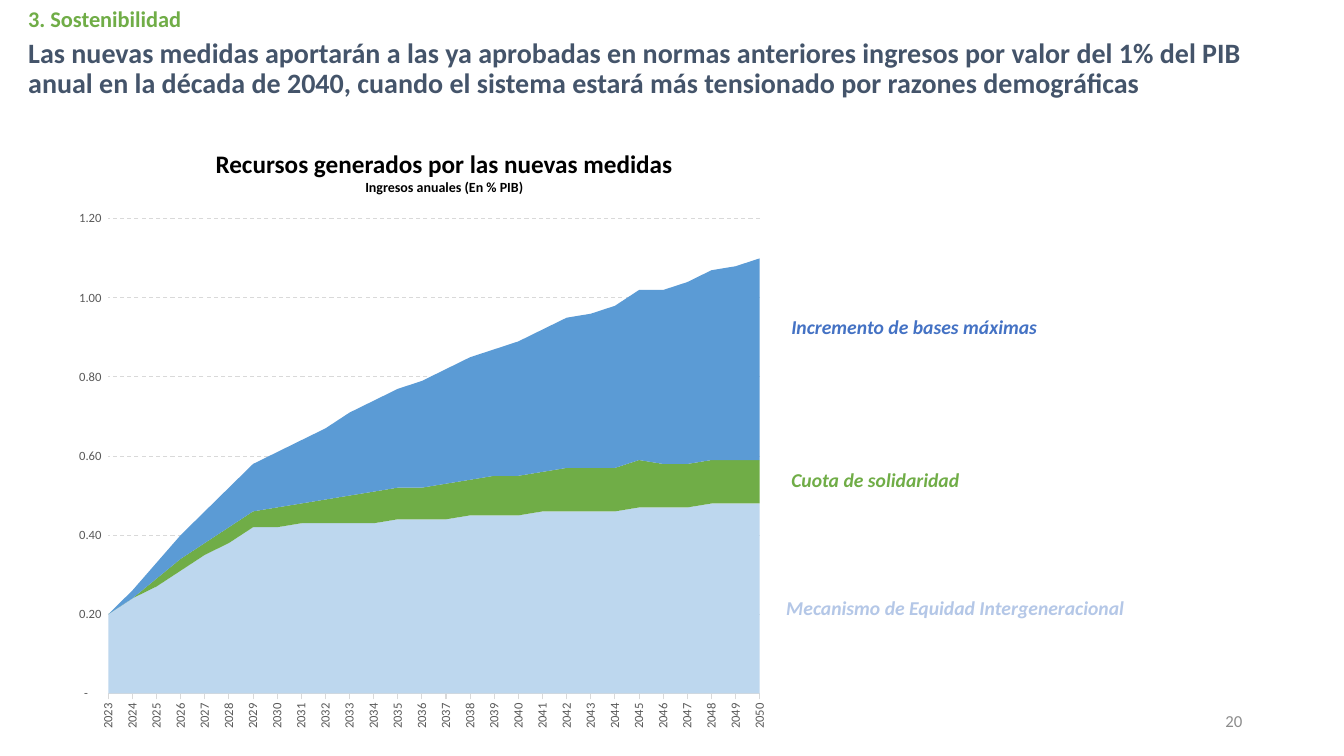
import pptx
import pptx.chart.data
import pptx.dml.color
import pptx.enum.chart
import pptx.enum.dml
import pptx.enum.text
import pptx.oxml
import pptx.oxml.ns
import pptx.util

Inches, Pt = pptx.util.Inches, pptx.util.Pt
ALIGN = pptx.enum.text.PP_ALIGN
ANCHOR = pptx.enum.text.MSO_ANCHOR
FONT = "Calibri"
COLORS = {
    "title": "44546A", "section": "70AD47", "black": "000000", "page": "8C8C8C",
    "axis": "595959", "grid": "D9D9D9",
    "equity": "BDD7EE", "solidarity": "70AD47", "bases": "5B9BD5",
    "equity_label": "B4C7E7", "bases_label": "4472C4",
}

YEARS = [str(year) for year in range(2023, 2051)]
# Annual income in % of GDP: name, colour, values from bottom to top
MEASURES = [
    ("Mecanismo de Equidad Intergeneracional", "equity",
     [0.2, 0.24, 0.27, 0.31, 0.35, 0.38, 0.42, 0.42, 0.43, 0.43, 0.43, 0.43, 0.44, 0.44,
      0.44, 0.45, 0.45, 0.45, 0.46, 0.46, 0.46, 0.46, 0.47, 0.47, 0.47, 0.48, 0.48, 0.48]),
    ("Cuota de solidaridad", "solidarity",
     [None, 0, 0.02, 0.03, 0.03, 0.04, 0.04, 0.05, 0.05, 0.06, 0.07, 0.08, 0.08, 0.08,
      0.09, 0.09, 0.1, 0.1, 0.1, 0.11, 0.11, 0.11, 0.12, 0.11, 0.11, 0.11, 0.11, 0.11]),
    ("Incremento de bases máximas", "bases",
     [None, 0.02, 0.04, 0.06, 0.08, 0.1, 0.12, 0.14, 0.16, 0.18, 0.21, 0.23, 0.25, 0.27,
      0.29, 0.31, 0.32, 0.34, 0.36, 0.38, 0.39, 0.41, 0.43, 0.44, 0.46, 0.48, 0.49, 0.51]),
]


def rgb(name):
    return pptx.dml.color.RGBColor.from_string(COLORS[name])


def style_font(font, size, color, bold=False, italic=False):
    font.name, font.size, font.bold, font.italic = FONT, Pt(size), bold, italic
    font.color.rgb = rgb(color)


def write(frame, text, size, color, bold=False, italic=False, align=ALIGN.LEFT,
          anchor=ANCHOR.TOP, wrap=True, spacing=None, more=False):
    """Write one paragraph; more=True adds it below the existing text."""
    frame.word_wrap = wrap
    frame.vertical_anchor = anchor
    paragraph = frame.add_paragraph() if more else frame.paragraphs[0]
    paragraph.alignment = align
    paragraph.line_spacing = spacing
    run = paragraph.add_run()
    run.text = text
    style_font(run.font, size, color, bold, italic)


def add_box(slide, left, top, width, height):
    return slide.shapes.add_textbox(
        Inches(left), Inches(top), Inches(width), Inches(height)).text_frame


def add_heading(slide, left, top, width):
    # Section name and headline
    write(add_box(slide, left, top, 5.74, 0.37), "3. Sostenibilidad", 16, "section", bold=True)
    headline = slide.shapes.title
    headline.left, headline.top = Inches(left), Inches(top + 0.32)
    headline.width, headline.height = Inches(width), Inches(0.74)
    headline.text_frame.auto_size = pptx.enum.text.MSO_AUTO_SIZE.NONE
    write(headline.text_frame,
          "Las nuevas medidas aportarán a las ya aprobadas en normas anteriores ingresos por "
          "valor del 1% del PIB anual en la década de 2040, cuando el sistema estará más "
          "tensionado por razones demográficas",
          20, "title", bold=True, anchor=ANCHOR.MIDDLE, spacing=0.9)


def set_plot_area(chart, x, y, w, h):
    # Inner plot rectangle, as fractions of the chart
    plot_area = chart._chartSpace.chart.plotArea
    for old in plot_area.findall(pptx.oxml.ns.qn("c:layout")):
        plot_area.remove(old)
    sizes = "".join(f'<c:{key} val="{value}"/>' for key, value in zip("xywh", (x, y, w, h)))
    plot_area.insert(0, pptx.oxml.parse_xml(
        f'<c:layout {pptx.oxml.ns.nsdecls("c")}><c:manualLayout>'
        '<c:layoutTarget val="inner"/><c:xMode val="edge"/><c:yMode val="edge"/>'
        f'{sizes}</c:manualLayout></c:layout>'))


def style_axes(chart):
    tick_mark = pptx.enum.chart.XL_TICK_MARK
    years, share = chart.category_axis, chart.value_axis
    for axis in (years, share):
        style_font(axis.tick_labels.font, 9, "axis")
    years.major_tick_mark = tick_mark.OUTSIDE
    years.has_major_gridlines = False
    years.format.line.color.rgb = rgb("grid")
    years.format.line.width = Pt(0.75)
    label_body = years._element.find(".//" + pptx.oxml.ns.qn("a:bodyPr"))
    label_body.set("rot", "-5400000")
    label_body.set("vert", "horz")

    share.minimum_scale, share.maximum_scale, share.major_unit = 0, 1.2, 0.2
    share.major_tick_mark = tick_mark.NONE
    share.format.line.fill.background()
    share.tick_labels.number_format = '_(* #,##0.00_);_(* \\(#,##0.00\\);_(* "-"??_);_(@_)'
    share.tick_labels.number_format_is_linked = False
    share.has_major_gridlines = True
    grid = share.major_gridlines.format.line
    grid.color.rgb = rgb("grid")
    grid.width = Pt(0.75)
    grid.dash_style = pptx.enum.dml.MSO_LINE.DASH
    # Areas start and end on the plot edges
    share._element.find(pptx.oxml.ns.qn("c:crossBetween")).set("val", "midCat")


def add_income_chart(slide, left, top, width, height):
    # Chart heading
    heading = add_box(slide, left + 0.2, top - 0.58, 7.19, 0.57)
    write(heading, "Recursos generados por las nuevas medidas", 18, "black",
          bold=True, align=ALIGN.CENTER)
    write(heading, "Ingresos anuales (En % PIB)", 10, "black",
          bold=True, align=ALIGN.CENTER, more=True)

    # Stacked areas
    data = pptx.chart.data.CategoryChartData(number_format="0.00")
    data.categories = YEARS
    for name, _, values in MEASURES:
        data.add_series(name, values)
    chart = slide.shapes.add_chart(
        pptx.enum.chart.XL_CHART_TYPE.AREA_STACKED,
        Inches(left), Inches(top), Inches(width), Inches(height), data).chart
    chart.has_title = chart.has_legend = False
    style_font(chart.font, 10, "black")
    chart.plots[0].vary_by_categories = False
    for series, (_, color, _) in zip(chart.plots[0].series, MEASURES):
        series.format.fill.solid()
        series.format.fill.fore_color.rgb = rgb(color)
        series.format.line.fill.background()
    style_axes(chart)
    set_plot_area(chart, 0.065, 0.032, 0.905, 0.88)


def add_measure_labels(slide, left):
    # Names beside the areas, top to bottom
    places = [(0.05, 3.08, 2.66, "bases_label"), (0.05, 4.59, 1.88, "solidarity"),
              (0, 5.86, 3.57, "equity_label")]
    for (name, _, _), (indent, top, width, color) in zip(reversed(MEASURES), places):
        write(add_box(slide, left + indent, top, width, 0.34), name, 14, color,
              bold=True, italic=True, wrap=False)


def add_page_number(slide, left, top, width, height):
    write(add_box(slide, left, top, width, height), "20", 12, "page",
          align=ALIGN.RIGHT, anchor=ANCHOR.MIDDLE)


def main():
    deck = pptx.Presentation()
    deck.slide_width, deck.slide_height = Inches(13.33), Inches(7.5)
    slide = deck.slides.add_slide(deck.slide_layouts.get_by_name("Title Only"))
    add_heading(slide, 0.18, 0, 12.24)
    add_income_chart(slide, 0.61, 2, 7.14, 5.35)
    add_measure_labels(slide, 7.7)
    add_page_number(slide, 9.42, 6.95, 3, 0.4)
    deck.save("out.pptx")


if __name__ == "__main__":
    main()
